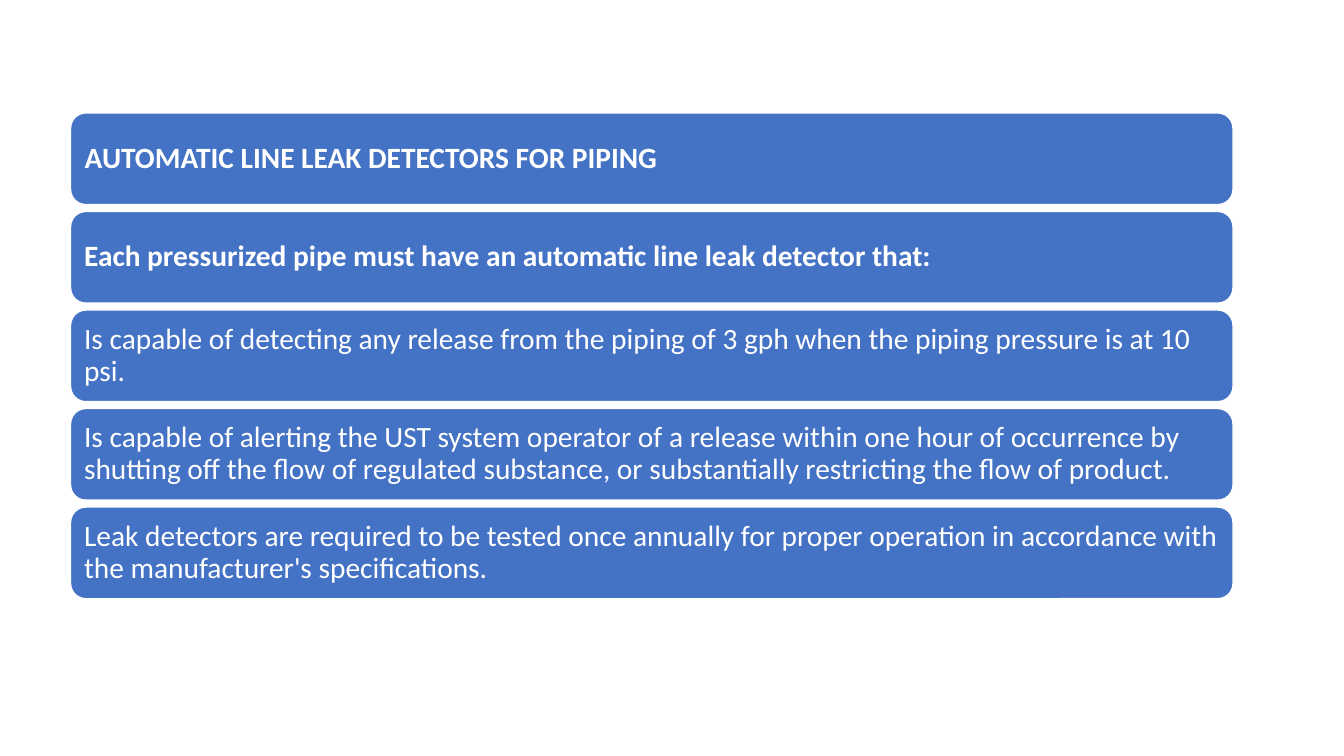
from dataclasses import dataclass

from pptx import Presentation
from pptx.dml.color import RGBColor
from pptx.enum.shapes import MSO_SHAPE
from pptx.enum.text import MSO_ANCHOR, MSO_AUTO_SIZE, PP_ALIGN
from pptx.shapes.autoshape import Shape
from pptx.slide import Slide
from pptx.util import Inches, Pt

BLUE = "4472C4"
WHITE = "FFFFFF"
LEFT, WIDTH, HEIGHT = 0.7, 11.53, 0.91
FIRST_TOP, LAST_TOP = 1.12, 5.03
CORNER_INSET = 0.05
MARGIN = 0.09


@dataclass(frozen=True)
class Card:
    text: str
    bold: bool = False
    is_title: bool = False


CARDS = [
    Card("AUTOMATIC LINE LEAK DETECTORS FOR PIPING", bold=True, is_title=True),
    Card("Each pressurized pipe must have an automatic line leak detector that:", bold=True),
    Card("Is capable of detecting any release from the piping of 3 gph when the "
         "piping pressure is at 10 psi."),
    Card("Is capable of alerting the UST system operator of a release within one hour "
         "of occurrence by shutting off the flow of regulated substance, or "
         "substantially restricting the flow of product."),
    Card("Leak detectors are required to be tested once annually for proper operation "
         "in accordance with the manufacturer's specifications."),
]


def color(value: str) -> RGBColor:
    return RGBColor.from_string(value)


def set_attributes(target: object, values: dict) -> None:
    for name, value in values.items():
        setattr(target, name, value)


def write_text(sp: Shape, card: Card) -> None:
    tf = sp.text_frame
    margins = {f"margin_{side}": Inches(MARGIN) for side in ("left", "top", "right", "bottom")}
    set_attributes(tf, {
        "word_wrap": True,
        "auto_size": MSO_AUTO_SIZE.NONE,
        "vertical_anchor": MSO_ANCHOR.MIDDLE,
        **margins,
    })
    p = tf.paragraphs[0]
    set_attributes(p, {"alignment": PP_ALIGN.LEFT, "line_spacing": 0.9})
    r = p.add_run()
    r.text = card.text
    set_attributes(r.font, {"name": "Calibri", "size": Pt(21), "bold": card.bold})
    r.font.color.rgb = color(WHITE)


def place_title(s: Slide, top: float) -> Shape:
    sp = s.shapes.title
    set_attributes(sp, {
        "left": Inches(LEFT + CORNER_INSET),
        "top": Inches(top + CORNER_INSET),
        "width": Inches(WIDTH - 2 * CORNER_INSET),
        "height": Inches(HEIGHT - 2 * CORNER_INSET),
    })
    sp.element.getparent().append(sp.element)
    return sp


def add_card(s: Slide, card: Card, top: float) -> None:
    sp = s.shapes.add_shape(
        MSO_SHAPE.ROUNDED_RECTANGLE,
        Inches(LEFT), Inches(top), Inches(WIDTH), Inches(HEIGHT),
    )
    sp.shadow.inherit = False
    sp.fill.solid()
    sp.fill.fore_color.rgb = color(BLUE)
    sp.line.color.rgb = color(WHITE)
    sp.line.width = Pt(1)
    write_text(place_title(s, top) if card.is_title else sp, card)


def main() -> None:
    prs = Presentation()
    prs.slide_width, prs.slide_height = Inches(13.33), Inches(7.5)
    s = prs.slides.add_slide(prs.slide_layouts.get_by_name("Title Only"))
    pitch = (LAST_TOP - FIRST_TOP) / (len(CARDS) - 1)
    for i, card in enumerate(CARDS):
        add_card(s, card, FIRST_TOP + i * pitch)
    prs.save("out.pptx")


if __name__ == "__main__":
    main()
